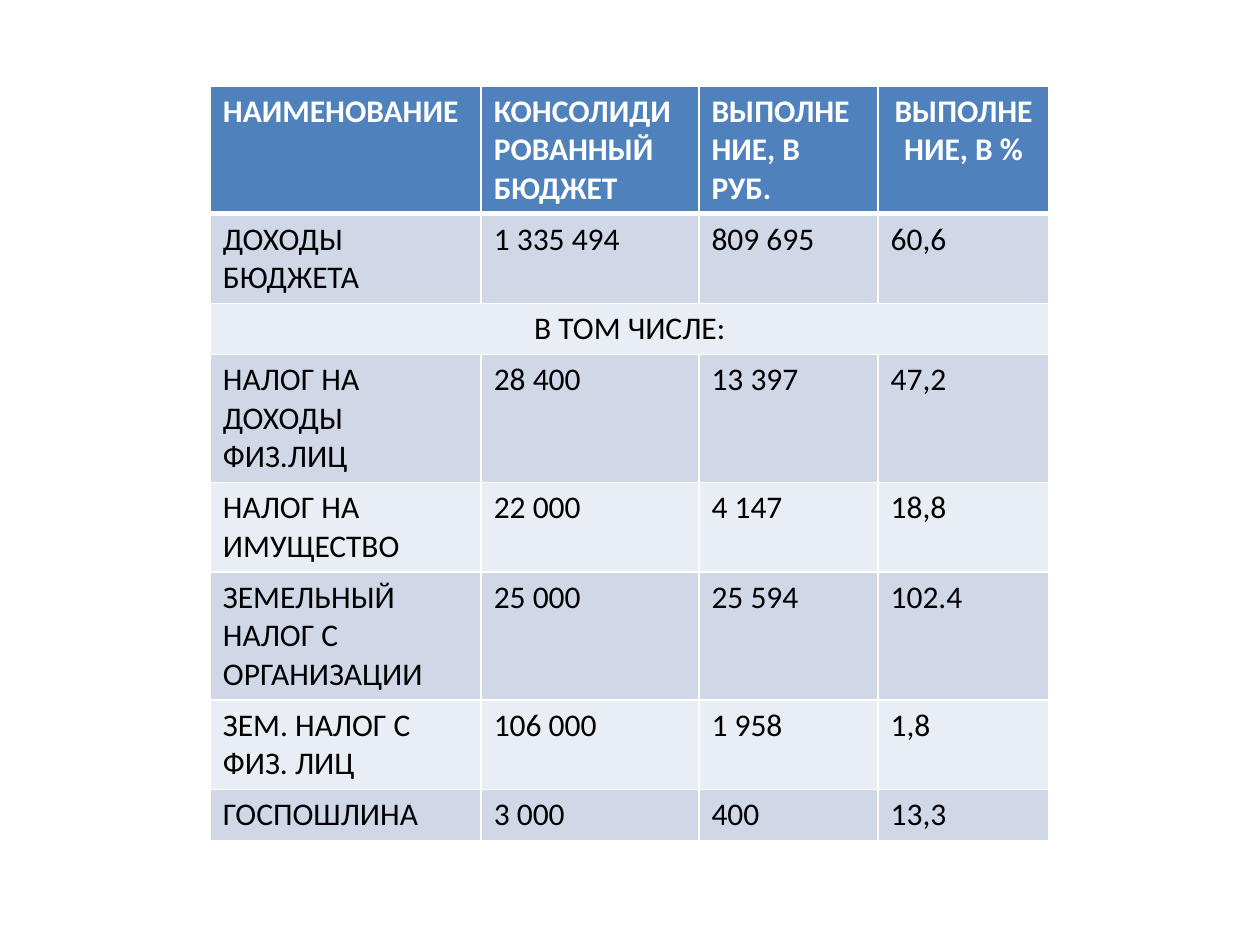
from dataclasses import dataclass

from lxml.etree import SubElement
from pptx import Presentation
from pptx.dml.color import RGBColor
from pptx.enum.text import PP_ALIGN as Align
from pptx.oxml.ns import qn
from pptx.util import Cm, Pt


@dataclass(frozen=True)
class Theme:
    font: str = "Calibri"
    size: int = 18
    header: str = "4F81BD"
    bands: tuple = ("E9EDF4", "D0D8E8")
    light: str = "FFFFFF"
    dark: str = "000000"
    thin: int = 1
    thick: int = 3


THEME = Theme()

HEADINGS = ("НАИМЕНОВАНИЕ", "КОНСОЛИДИРОВАННЫЙ БЮДЖЕТ",
            "ВЫПОЛНЕНИЕ, В РУБ.", "ВЫПОЛНЕНИЕ, В %")
BUDGET = (
    ("ДОХОДЫ БЮДЖЕТА", "1 335 494", "809 695", "60,6"),
    ("В ТОМ ЧИСЛЕ:",),
    ("НАЛОГ НА ДОХОДЫ ФИЗ.ЛИЦ", "28 400", "13 397", "47,2"),
    ("НАЛОГ НА ИМУЩЕСТВО", "22 000", "4 147", "18,8"),
    ("ЗЕМЕЛЬНЫЙ НАЛОГ С ОРГАНИЗАЦИИ", "25 000", "25 594", "102.4"),
    ("ЗЕМ. НАЛОГ С ФИЗ. ЛИЦ", "106 000", "1 958", "1,8"),
    ("ГОСПОШЛИНА", "3 000", "400", "13,3"),
)
COLUMN_WIDTHS = (5.46, 4.39, 3.61, 3.45)
HEADER_HEIGHT, ROW_HEIGHT, TABLE_HEIGHT = 2.39, 1.03, 15.01


def write_text(cell, text, color=THEME.dark, bold=False, align=Align.LEFT):
    para = cell.text_frame.paragraphs[0]
    para.alignment = align
    span = para.add_run()
    span.text = text
    span.font.name = THEME.font
    span.font.size = Pt(THEME.size)
    span.font.bold = bold
    span.font.color.rgb = RGBColor.from_string(color)


def style_cell(cell, fill, top=THEME.thin, bottom=THEME.thin):
    # Borders must come before the fill in the cell properties
    properties = cell._tc.get_or_add_tcPr()
    widths = {"a:lnL": THEME.thin, "a:lnR": THEME.thin,
              "a:lnT": top, "a:lnB": bottom}
    for side, width in widths.items():
        line = SubElement(properties, qn(side), w=str(Pt(width)))
        paint = SubElement(line, qn("a:solidFill"))
        SubElement(paint, qn("a:srgbClr"), val=THEME.light)
    cell.fill.solid()
    cell.fill.fore_color.rgb = RGBColor.from_string(fill)


def add_budget_table(page):
    frame = page.shapes.add_table(
        len(BUDGET) + 1, len(HEADINGS), Cm(4.24), Cm(1.73),
        Cm(sum(COLUMN_WIDTHS)), Cm(TABLE_HEIGHT))
    table = frame.table
    for column, width in zip(table.columns, COLUMN_WIDTHS):
        column.width = Cm(width)
    for index, row in enumerate(table.rows):
        row.height = Cm(ROW_HEIGHT if index else HEADER_HEIGHT)
    frame.height = Cm(TABLE_HEIGHT)

    # Header row
    for column, heading in enumerate(HEADINGS):
        cell = table.cell(0, column)
        last = column == len(HEADINGS) - 1
        style_cell(cell, THEME.header, bottom=THEME.thick)
        write_text(cell, heading, color=THEME.light, bold=True,
                   align=Align.CENTER if last else Align.LEFT)

    # Banded body rows; a single value spans the whole row
    for index, values in enumerate(BUDGET, start=1):
        for cell in table.rows[index].cells:
            style_cell(cell, THEME.bands[index % 2],
                       top=THEME.thick if index == 1 else THEME.thin)
        spans = len(values) == 1
        if spans:
            table.cell(index, 0).merge(table.cell(index, len(HEADINGS) - 1))
        for column, value in enumerate(values):
            write_text(table.cell(index, column), value,
                       align=Align.CENTER if spans else Align.LEFT)


def main():
    deck = Presentation()
    deck.slide_width, deck.slide_height = Cm(25.4), Cm(19.05)
    page = deck.slides.add_slide(deck.slide_layouts[6])
    add_budget_table(page)
    deck.save("out.pptx")


if __name__ == "__main__":
    main()
